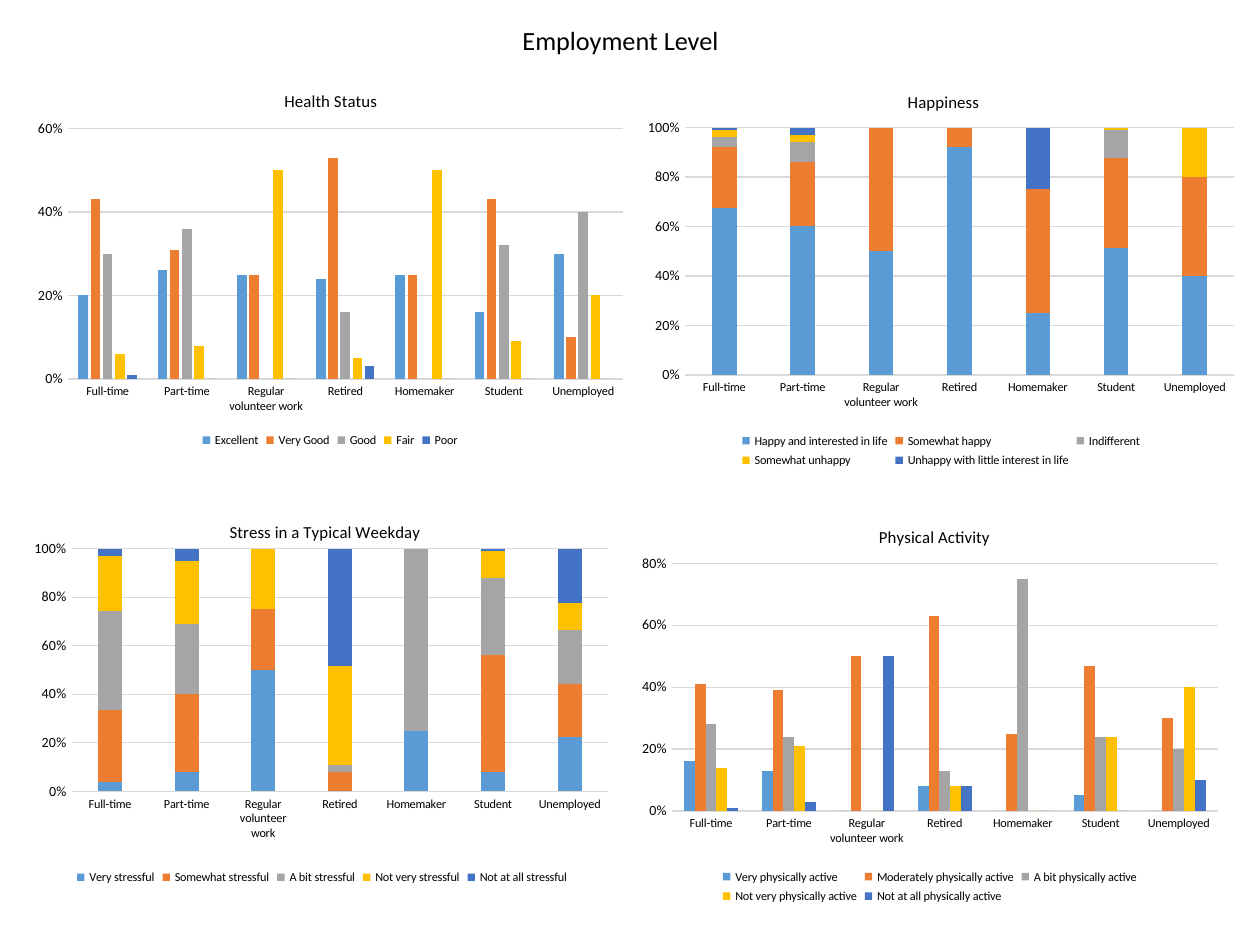
from pptx import Presentation
from pptx.chart.data import CategoryChartData
from pptx.dml.color import RGBColor
from pptx.enum.chart import XL_CHART_TYPE, XL_LEGEND_POSITION, XL_TICK_MARK
from pptx.enum.text import MSO_ANCHOR, PP_ALIGN
from pptx.oxml import parse_xml
from pptx.oxml.ns import nsdecls, qn
from pptx.util import Pt

FONT = "Calibri"
BLACK = RGBColor(0x00, 0x00, 0x00)
GRID = RGBColor(0xD9, 0xD9, 0xD9)
BLUE = RGBColor(0x5B, 0x9B, 0xD5)
ORANGE = RGBColor(0xED, 0x7D, 0x31)
GRAY = RGBColor(0xA5, 0xA5, 0xA5)
GOLD = RGBColor(0xFF, 0xC0, 0x00)
NAVY = RGBColor(0x44, 0x72, 0xC4)
SERIES_COLORS = (BLUE, ORANGE, GRAY, GOLD, NAVY)

CLUSTERED = XL_CHART_TYPE.COLUMN_CLUSTERED
STACKED = XL_CHART_TYPE.COLUMN_STACKED_100
CATEGORIES = ("Full-time", "Part-time", "Regular volunteer work", "Retired",
              "Homemaker", "Student", "Unemployed")

# title, type, overlap, axis maximum, box in points,
# title left, plot area (both as fractions of the chart), series
CHARTS = (
    ("Health Status", CLUSTERED, -27, 0.6, (14.4, 38.2, 348.5, 220.3),
     0.42, (0.07, 0.16, 0.91, 0.65), {
         "Excellent": (0.2, 0.26, 0.25, 0.24, 0.25, 0.16, 0.3),
         "Very Good": (0.43, 0.31, 0.25, 0.53, 0.25, 0.43, 0.1),
         "Good": (0.3, 0.36, 0, 0.16, 0, 0.32, 0.4),
         "Fair": (0.06, 0.08, 0.5, 0.05, 0.5, 0.09, 0.2),
         "Poor": (0.01, 0, 0, 0.03, 0, 0, 0)}),
    ("Happiness", STACKED, 100, 1, (363.6, 38.2, 348.5, 231.8),
     0.44, (0.08, 0.15, 0.9, 0.61), {
         "Happy and interested in life": (68, 61, 50, 92, 25, 51, 40),
         "Somewhat happy": (25, 26, 50, 8, 50, 36, 40),
         "Indifferent": (4, 8, 0, 0, 0, 11, 0),
         "Somewhat unhappy": (3, 3, 0, 0, 0, 1, 20),
         "Unhappy with little interest in life": (1, 3, 0, 0, 25, 0, 0)}),
    ("Stress in a Typical Weekday", STACKED, 100, 1,
     (13.7, 284.4, 340.6, 223.9),
     0.34, (0.08, 0.13, 0.9, 0.62), {
         "Very stressful": (4, 8, 50, 0, 25, 8, 22),
         "Somewhat stressful": (30, 32, 25, 8, 0, 48, 22),
         "A bit stressful": (41, 29, 0, 3, 75, 32, 22),
         "Not very stressful": (23, 26, 25, 41, 0, 11, 11),
         "Not at all stressful": (3, 5, 0, 49, 0, 1, 22)}),
    ("Physical Activity", CLUSTERED, 0, 0.8, (360, 287.3, 342.7, 231.8),
     0.41, (0.07, 0.15, 0.91, 0.61), {
         "Very physically active": (0.16, 0.13, 0, 0.08, 0, 0.05, 0),
         "Moderately physically active":
             (0.41, 0.39, 0.5, 0.63, 0.25, 0.47, 0.3),
         "A bit physically active": (0.28, 0.24, 0, 0.13, 0.75, 0.24, 0.2),
         "Not very physically active": (0.14, 0.21, 0, 0.08, 0, 0.24, 0.4),
         "Not at all physically active": (0.01, 0.03, 0.5, 0.08, 0, 0, 0.1)}),
)


class SlideBuilder:
    def __init__(self, prs):
        self.s = prs.slides.add_slide(prs.slide_layouts[6])

    def style(self, font, size):
        font.name, font.size, font.bold = FONT, Pt(size), False
        font.color.rgb = BLACK

    def heading(self, text, box, size):
        tf = self.s.shapes.add_textbox(*map(Pt, box)).text_frame
        tf.word_wrap = True
        tf.vertical_anchor = MSO_ANCHOR.MIDDLE
        tf.text = text
        p = tf.paragraphs[0]
        p.alignment, p.line_spacing = PP_ALIGN.CENTER, 0.9
        self.style(p.runs[0].font, size)

    def place(self, parent, index, target="", **fractions):
        """Give a chart part a manual layout in fractions of the chart."""
        for old in parent.findall(qn("c:layout")):
            parent.remove(old)
        modes = "".join(f'<c:{k}Mode val="edge"/>' for k in "xy")
        values = "".join(f'<c:{k} val="{v}"/>' for k, v in fractions.items())
        parent.insert(index, parse_xml(
            f'<c:layout {nsdecls("c")}><c:manualLayout>{target}{modes}{values}'
            '</c:manualLayout></c:layout>'))

    def chart(self, title, kind, overlap, top, box, title_x, area, series):
        data = CategoryChartData(
            number_format="0%" if kind == CLUSTERED else "0")
        data.categories = CATEGORIES
        for name, values in series.items():
            data.add_series(name, values)
        chart = self.s.shapes.add_chart(kind, *map(Pt, box), data).chart
        self.style(chart.font, 8)

        # Title
        chart.has_title = True
        tf = chart.chart_title.text_frame
        tf.text = title
        self.style(tf.paragraphs[0].runs[0].font, 9.6)
        chart.chart_title.include_in_layout = False
        self.place(chart.chart_title._element, 1, x=title_x, y=0.05)

        # Plot and series
        plot = chart.plots[0]
        plot.gap_width, plot.overlap = 219, overlap
        plot.vary_by_categories = False
        for ser, color in zip(plot.series, SERIES_COLORS):
            ser.format.fill.solid()
            ser.format.fill.fore_color.rgb = color
        self.place(chart._chartSpace.chart.plotArea, 0,
                   '<c:layoutTarget val="inner"/>', **dict(zip("xywh", area)))

        # Axes
        cat, val = chart.category_axis, chart.value_axis
        for axis, size in ((cat, 7), (val, 8)):
            axis.major_tick_mark = axis.minor_tick_mark = XL_TICK_MARK.NONE
            self.style(axis.tick_labels.font, size)
        val.minimum_scale, val.maximum_scale, val.major_unit = 0, top, 0.2
        val.tick_labels.number_format = "0%"
        val.tick_labels.number_format_is_linked = False
        val.format.line.fill.background()
        for part in (cat, val.major_gridlines):
            part.format.line.color.rgb = GRID
            part.format.line.width = Pt(0.75)

        # Legend
        chart.has_legend = True
        chart.legend.position = XL_LEGEND_POSITION.BOTTOM
        chart.legend.include_in_layout = False
        self.style(chart.legend.font, 7)


def main():
    prs = Presentation()
    prs.slide_width, prs.slide_height = Pt(720), Pt(540)
    slide = SlideBuilder(prs)
    slide.heading("Employment Level", (268.6, 9.4, 172, 29.5), 15)
    for spec_row in CHARTS:
        slide.chart(*spec_row)
    prs.save("out.pptx")


if __name__ == "__main__":
    main()
